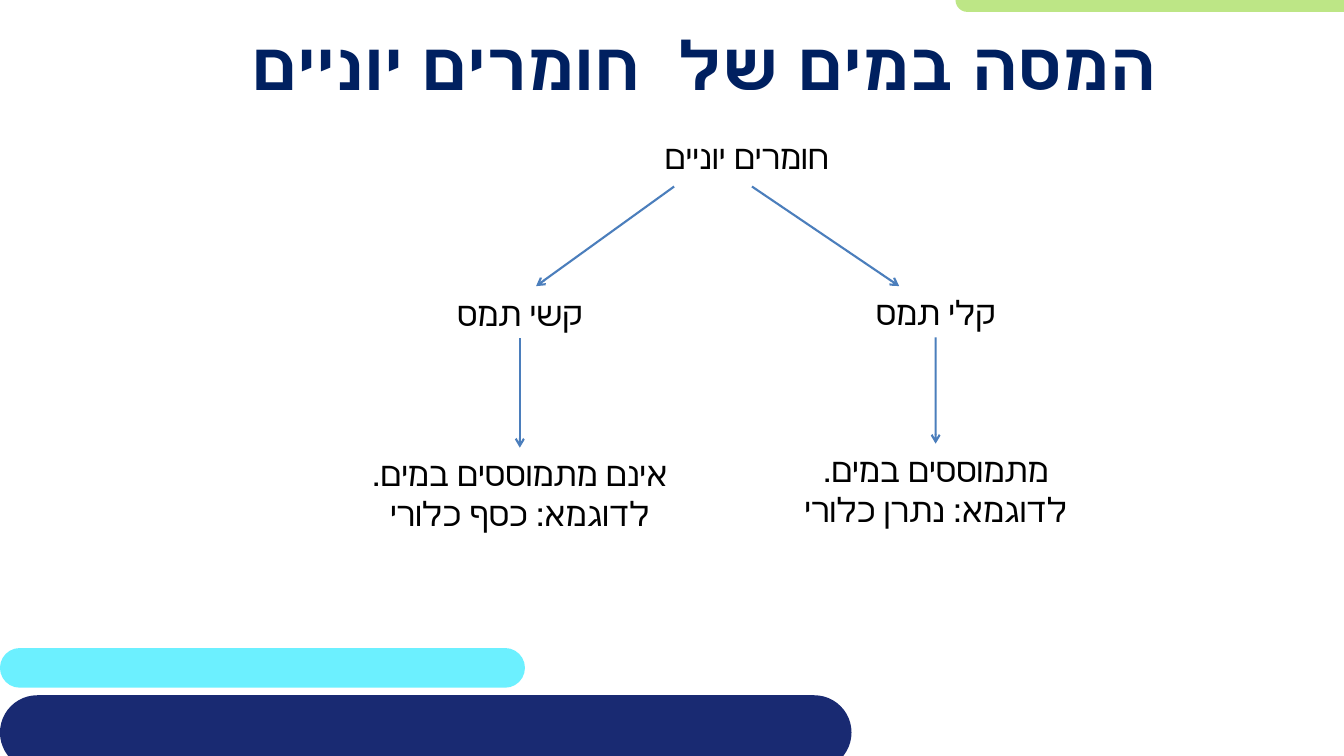
"""Build a slide with a tree that sorts ionic materials by solubility in water."""
from lxml.etree import SubElement
from pptx import Presentation
from pptx.dml.color import RGBColor
from pptx.enum.lang import MSO_LANGUAGE_ID as Language
from pptx.enum.shapes import MSO_CONNECTOR as Connector, MSO_SHAPE as Shape
from pptx.enum.text import MSO_ANCHOR as Anchor, PP_ALIGN as Align
from pptx.oxml.ns import qn
from pptx.util import Cm, Pt


def color(value):
    return RGBColor.from_string(value)


def write(shape, text, font_name, size, hex_color, bold=False):
    frame = shape.text_frame
    frame.word_wrap = True
    frame.text = text
    for paragraph in frame.paragraphs:
        paragraph.alignment = Align.CENTER
        paragraph._p.get_or_add_pPr().set("rtl", "1")
        for run in paragraph.runs:
            run.font.name = font_name
            run.font.size = Pt(size)
            run.font.bold = bold
            run.font.color.rgb = color(hex_color)
            run.font.language_id = Language.HEBREW


presentation = Presentation()
presentation.slide_width = Cm(33.87)
presentation.slide_height = Cm(19.05)
slide = presentation.slides.add_slide(presentation.slide_layouts[5])

bars = [
    (0, 16.33, 13.23, 1, "6CF0FF"),
    (24.08, -0.3, 14.73, 0.6, "BDE686"),
    (0, 17.52, 21.46, 1.88, "192A72"),
]
for left, top, width, height, fill in bars:
    bar = slide.shapes.add_shape(
        Shape.ROUNDED_RECTANGLE, Cm(left), Cm(top), Cm(width), Cm(height))
    bar.adjustments[0] = 0.5
    bar.shadow.inherit = False
    bar.fill.solid()
    bar.fill.fore_color.rgb = color(fill)
    bar.line.fill.background()

title = slide.shapes.title
title.left, title.top, title.width, title.height = Cm(2.24), Cm(0.6), Cm(30.99), Cm(2)
title.text_frame.vertical_anchor = Anchor.MIDDLE
write(title, "המסה במים של  חומרים יוניים", "League Spartan", 48, "002060", True)

labels = {
    "materials": (18.82, 3.3, 6, 1.27, "חומרים יוניים"),
    "soluble": (23.58, 7.23, 4.3, 1.27, "קלי תמס"),
    "insoluble": (13.1, 7.25, 4.93, 1.27, "קשי תמס"),
    "dissolves": (23.58, 11.18, 7.6, 2.31, "מתמוססים במים.\nלדוגמא: נתרן כלורי"),
    "stays solid": (13.1, 11.28, 10, 2.31, "אינם מתמוססים במים.\nלדוגמא: כסף כלורי"),
}
boxes = {}
for name, (center, top, width, height, text) in labels.items():
    boxes[name] = slide.shapes.add_textbox(
        Cm(center - width / 2), Cm(top), Cm(width), Cm(height))
    write(boxes[name], text, "Calibri", 24, "000000")

arrows = [
    (18.95, 4.7, 22.66, 7.21, None),
    (16.99, 4.7, 13.51, 7.21, None),
    (23.58, 8.5, 23.58, 11.18, ("soluble", "dissolves")),
    (13.1, 8.52, 13.1, 11.28, ("insoluble", "stays solid")),
]
for start_x, start_y, end_x, end_y, joined in arrows:
    arrow = slide.shapes.add_connector(
        Connector.STRAIGHT, Cm(start_x), Cm(start_y), Cm(end_x), Cm(end_y))
    if joined:
        upper, lower = joined
        arrow.begin_connect(boxes[upper], 2)
        arrow.end_connect(boxes[lower], 0)
    arrow.line.color.rgb = color("4B7EBC")
    arrow.line.width = Pt(1.5)
    SubElement(arrow.line._get_or_add_ln(), qn("a:tailEnd")).set("type", "arrow")
    SubElement(arrow._element.spPr, qn("a:effectLst"))

presentation.save("out.pptx")
